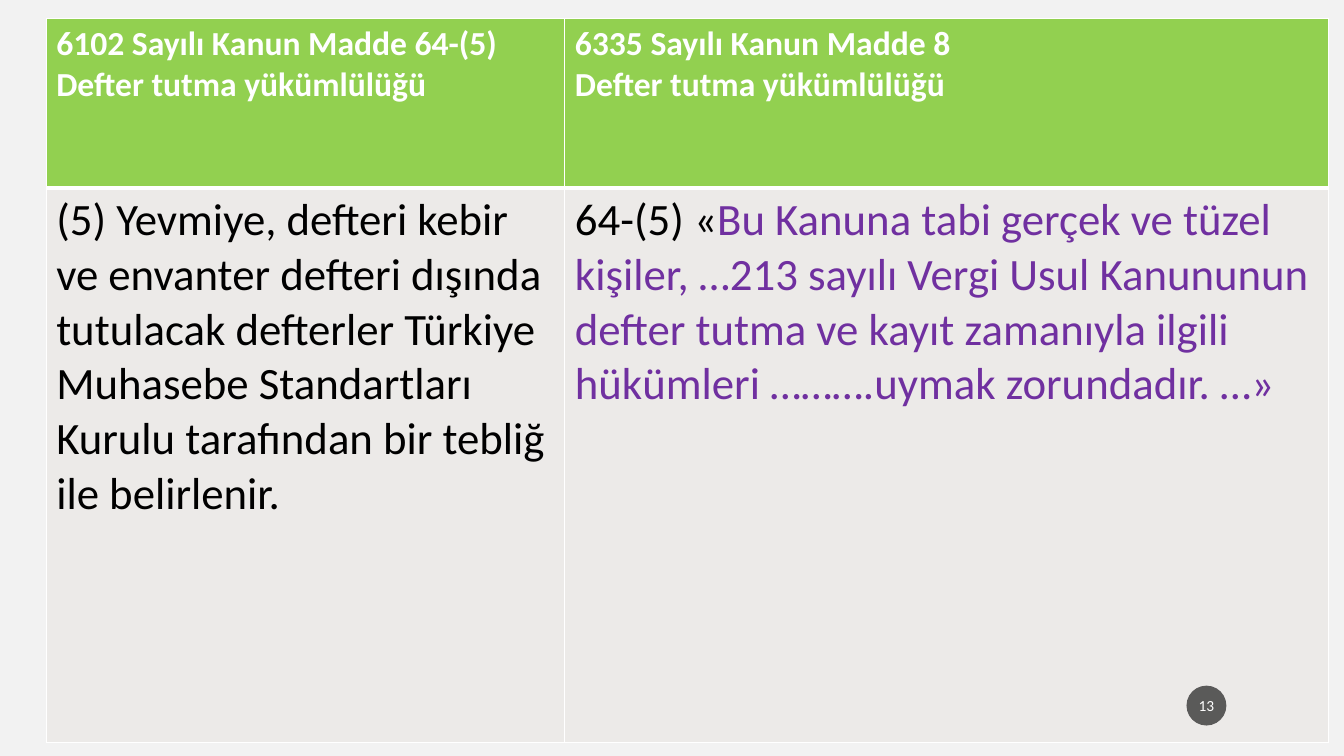
from lxml import etree
from pptx import Presentation
from pptx.dml.color import RGBColor
from pptx.enum.shapes import MSO_SHAPE
from pptx.enum.text import MSO_ANCHOR, PP_ALIGN
from pptx.oxml.ns import qn
from pptx.util import Pt

PX = 9525
OVAL = MSO_SHAPE.OVAL
MIDDLE = MSO_ANCHOR.MIDDLE
CENTER = PP_ALIGN.CENTER

WHITE, BLACK, PURPLE = "FFFFFF", "000000", "7030A0"
GREEN, WARM_GRAY, PAGE_GRAY, DARK = "92D050", "ECEAE8", "F2F2F2", "1D1D1D"


def paint(fill, color):
    fill.solid()
    fill.fore_color.rgb = RGBColor.from_string(color)


def add_run(p, text, size, color, bold=False):
    r = p.add_run()
    r.text = text
    r.font.name = "Calibri"
    r.font.size = Pt(size)
    r.font.bold = bold
    r.font.color.rgb = RGBColor.from_string(color)


prs = Presentation()
prs.slide_width, prs.slide_height = 1280 * PX, 720 * PX
s = prs.slides.add_slide(prs.slide_layouts[6])
paint(s.background.fill, PAGE_GRAY)

# Comparison of the two laws: each cell is a list of paragraphs of (text, color) runs
rows = [
    [
        [[("6102 Sayılı Kanun Madde 64-(5)", WHITE)],
         [("Defter tutma yükümlülüğü", WHITE)]],
        [[("6335 Sayılı Kanun Madde 8", WHITE)],
         [("Defter tutma yükümlülüğü", WHITE)]],
    ],
    [
        [[("(5) Yevmiye, defteri kebir ve envanter defteri dışında tutulacak "
           "defterler Türkiye Muhasebe Standartları Kurulu tarafından bir tebliğ "
           "ile belirlenir.", BLACK)]],
        [[("64-(5) «", BLACK),
          ("Bu Kanuna tabi gerçek ve tüzel kişiler, …213 sayılı Vergi Usul "
           "Kanununun defter tutma ve kayıt zamanıyla ilgili hükümleri "
           "……….uymak zorundadır. …»", PURPLE)]],
    ],
]
col_widths = [494, 727]
row_styles = [(161, GREEN, 24, True, 3), (528, WARM_GRAY, 32, False, 1)]

table = s.shapes.add_table(2, 2, 44 * PX, 18 * PX, 1221 * PX, 689 * PX).table
for col, width in zip(table.columns, col_widths):
    col.width = width * PX

for i, (height, fill, size, bold, bottom) in enumerate(row_styles):
    table.rows[i].height = height * PX
    for j, paragraphs in enumerate(rows[i]):
        cell = table.cell(i, j)
        tf = cell.text_frame
        for k, runs in enumerate(paragraphs):
            p = tf.add_paragraph() if k else tf.paragraphs[0]
            for text, color in runs:
                add_run(p, text, size, color, bold)
        tcPr = cell._tc.get_or_add_tcPr()
        top = 1 if i == 0 else row_styles[i - 1][4]
        for side, weight in (("lnL", 1), ("lnR", 1), ("lnT", top), ("lnB", bottom)):
            ln = etree.SubElement(tcPr, qn(f"a:{side}"), w=str(Pt(weight)))
            solid = etree.SubElement(ln, qn("a:solidFill"))
            etree.SubElement(solid, qn("a:srgbClr"), val=WHITE)
        paint(cell.fill, fill)

# Slide number badge
badge = s.shapes.add_shape(OVAL, 1130 * PX, 653 * PX, 38 * PX, 38 * PX)
badge.shadow.inherit = False
paint(badge.fill, DARK)
badge.line.fill.background()
badge_color = badge._element.spPr.find(qn("a:solidFill"))[0]
etree.SubElement(badge_color, qn("a:alpha"), val="70000")
tf = badge.text_frame
tf.margin_left = tf.margin_right = 2 * PX
tf.margin_top = tf.margin_bottom = 5 * PX
tf.vertical_anchor = MIDDLE
p = tf.paragraphs[0]
p.alignment = CENTER
add_run(p, "13", 11, WHITE)

prs.save("out.pptx")
